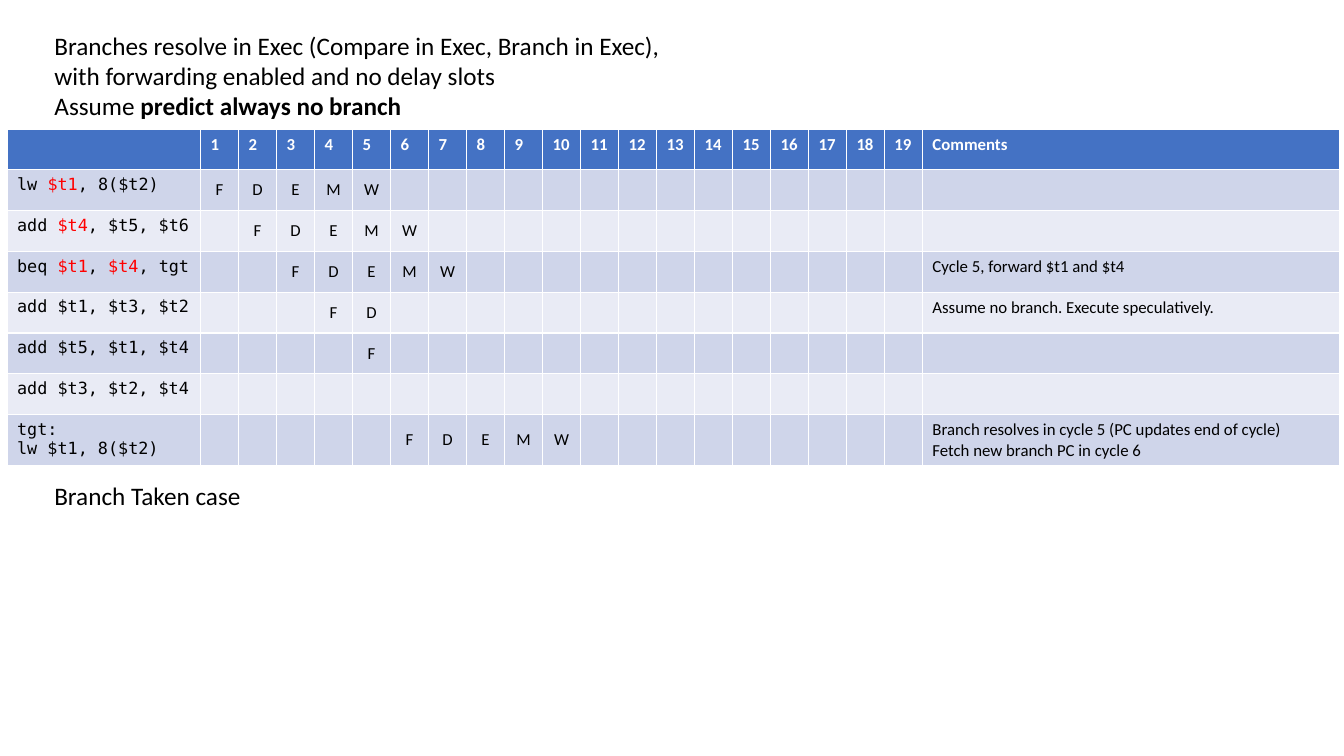
from pptx import Presentation
from pptx.dml.color import RGBColor
from pptx.enum import text
from pptx.util import Inches, Pt

BODY_FONT, CODE_FONT = "Calibri", "DejaVu Sans Mono"
BLACK, WHITE, RED = "000000", "FFFFFF", "FF0000"
HEADER_FILL, BAND_FILLS = "4472C4", ("CFD5EA", "E9EBF5")

# Text between bars is emphasised.
HEADING = ("Branches resolve in Exec (Compare in Exec, Branch in Exec),\n"
           "with forwarding enabled and no delay slots\n"
           "Assume |predict always no branch|")
CASE = "Branch Taken case"
CYCLES = 19
# instruction, cycle of the first stage, stages, comment
PIPELINE = [
    ("lw |$t1|, 8($t2)", 1, "FDEMW", ""),
    ("add |$t4|, $t5, $t6", 2, "FDEMW", ""),
    ("beq |$t1|, |$t4|, tgt", 3, "FDEMW", "Cycle 5, forward $t1 and $t4"),
    ("add $t1, $t3, $t2", 4, "FD", "Assume no branch. Execute speculatively."),
    ("add $t5, $t1, $t4", 5, "F", ""),
    ("add $t3, $t2, $t4", 1, "", ""),
    ("tgt:\nlw $t1, 8($t2)", 6, "FDEMW",
     "Branch resolves in cycle 5 (PC updates end of cycle)\nFetch new branch PC in cycle 6"),
]

LEFT, TOP, WIDTH = 0.07, 1.28, 13.22
CODE_WIDTH, COMMENT_WIDTH = 1.92, 4.14
CYCLE_WIDTH = (WIDTH - CODE_WIDTH - COMMENT_WIDTH) / CYCLES
ROW_HEIGHT = 3.24 / (len(PIPELINE) + 1)


def rgb(value):
    return RGBColor.from_string(value)


def write(text_frame, content, size, font=BODY_FONT, color=BLACK, bold=False,
          accent_color=None, accent_bold=False):
    """Fill the first paragraph, emphasising the parts between bars."""
    paragraph = text_frame.paragraphs[0]
    paragraph.font.size = Pt(size)
    for index, part in enumerate(content.split("|")):
        accented = index % 2 == 1
        for number, line in enumerate(part.split("\n")):
            if number:
                paragraph.add_line_break()
            if not line:
                continue
            run = paragraph.add_run()
            run.text = line
            run.font.name, run.font.size = font, Pt(size)
            run.font.bold = accent_bold if accented else bold
            run.font.color.rgb = rgb(accent_color if accented and accent_color else color)
    return paragraph


def fill_cell(cell, content, fill, **style):
    cell.fill.solid()
    cell.fill.fore_color.rgb = rgb(fill)
    return write(cell.text_frame, content, 12, **style)


def place_text(shape, box, content):
    shape.left, shape.top, shape.width, shape.height = map(Inches, box)
    frame = shape.text_frame
    frame.word_wrap = True
    frame.auto_size = text.MSO_AUTO_SIZE.NONE
    frame.vertical_anchor = text.MSO_ANCHOR.TOP
    write(frame, content, 18, accent_bold=True).alignment = text.PP_ALIGN.LEFT


def add_pipeline_table(slide):
    table = slide.shapes.add_table(
        len(PIPELINE) + 1, CYCLES + 2, Inches(LEFT), Inches(TOP),
        Inches(WIDTH), Inches(ROW_HEIGHT * (len(PIPELINE) + 1))).table
    widths = [CODE_WIDTH] + [CYCLE_WIDTH] * CYCLES + [COMMENT_WIDTH]
    for column, width in zip(table.columns, widths):
        column.width = Inches(width)

    headers = ["", *map(str, range(1, CYCLES + 1)), "Comments"]
    for column, header in enumerate(headers):
        fill_cell(table.cell(0, column), header, HEADER_FILL, color=WHITE, bold=True)

    for row, (instruction, start, stages, comment) in enumerate(PIPELINE, 1):
        fill = BAND_FILLS[(row - 1) % 2]
        fill_cell(table.cell(row, 0), instruction, fill, font=CODE_FONT, accent_color=RED)
        fill_cell(table.cell(row, CYCLES + 1), comment, fill)
        schedule = dict(enumerate(stages, start))
        for cycle in range(1, CYCLES + 1):
            cell = table.cell(row, cycle)
            cell.vertical_anchor = text.MSO_ANCHOR.MIDDLE
            paragraph = fill_cell(cell, schedule.get(cycle, ""), fill)
            paragraph.alignment = text.PP_ALIGN.CENTER


def main():
    presentation = Presentation()
    presentation.slide_width, presentation.slide_height = Inches(13.33), Inches(7.5)
    slide = presentation.slides.add_slide(presentation.slide_layouts[5])
    add_pipeline_table(slide)
    place_text(slide.shapes.title, (0.44, 0.25, 6.33, 1.01), HEADING)
    place_text(slide.shapes.add_textbox(0, 0, 0, 0), (0.44, 4.72, 2.07, 0.4), CASE)
    presentation.save("out.pptx")


if __name__ == "__main__":
    main()
